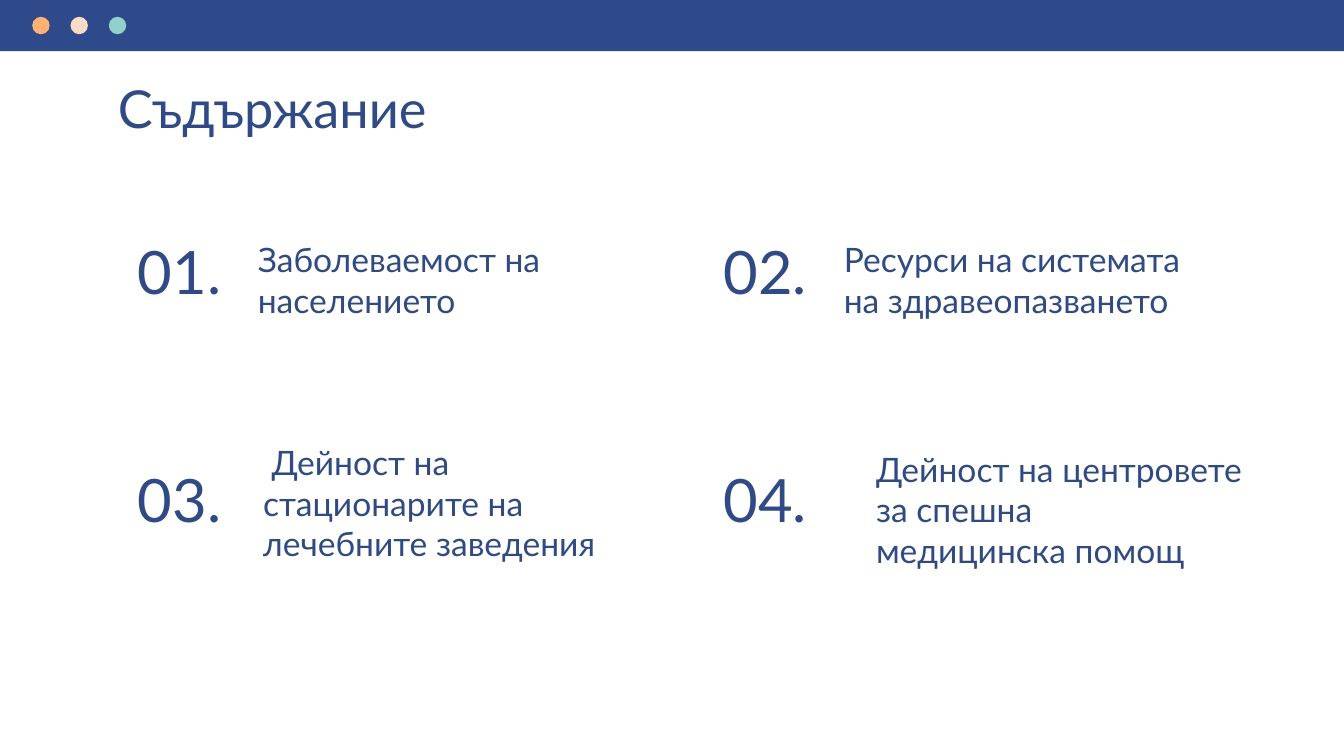
from pptx import Presentation
from pptx.dml.color import RGBColor
from pptx.enum import shapes, text
from pptx.util import Inches, Pt

NAVY = "2F4A8A"
DOT_COLORS = ["FFB172", "F8DBC4", "90D1CB"]
SLIDE_W = 10
SLIDE_H = SLIDE_W * 9 / 16


def rgb(value):
    return RGBColor.from_string(value)


def add_solid(s, kind, x, y, w, h, color):
    sp = s.shapes.add_shape(kind, Inches(x), Inches(y), Inches(w), Inches(h))
    sp.shadow.inherit = False
    sp.fill.solid()
    sp.fill.fore_color.rgb = rgb(color)
    sp.line.fill.background()


def add_text(s, x, y, w, h, lines, size,
             align=text.PP_ALIGN.LEFT, anchor=text.MSO_ANCHOR.TOP):
    tf = s.shapes.add_textbox(Inches(x), Inches(y), Inches(w), Inches(h)).text_frame
    tf.word_wrap = True
    tf.vertical_anchor = anchor
    tf.margin_left = tf.margin_right = Inches(0.1)
    tf.margin_top = tf.margin_bottom = Inches(0.1)
    p = tf.paragraphs[0]
    p.alignment = align
    for i, line in enumerate(lines):
        if i:
            p.add_line_break()
        r = p.add_run()
        r.text = line
        r.font.name = "Lato"
        r.font.size = Pt(size)
        r.font.color.rgb = rgb(NAVY)


def add_window_bar(s, x, y, w, h):
    add_solid(s, shapes.MSO_SHAPE.RECTANGLE, x, y, w, h, NAVY)
    dot, pitch = 0.13, 0.57 / 2
    for i, color in enumerate(DOT_COLORS):
        add_solid(s, shapes.MSO_SHAPE.OVAL, x + 0.24 + i * pitch,
                  y + (h - dot) / 2, dot, dot, color)


def add_entry(s, x, y, number, lines, dx, dy, w, h):
    """Number at (x, y), with its topic offset by (dx, dy)."""
    add_text(s, x + dx, y + dy, w, h, lines, 18)
    add_text(s, x, y, 0.99, 0.64, [f"{number:02d}."], 32,
             text.PP_ALIGN.CENTER, text.MSO_ANCHOR.BOTTOM)


def add_contents(s, x, y):
    col_pitch, row_pitch = 4.36, 1.7
    # Topic lines, then offset from the number and box size
    entries = [
        (["Заболеваемост на населението"], 0.98, -0.06, 2.92, 0.51),
        (["Ресурси на системата на здравеопазването"], 0.98, -0.06, 2.98, 0.8),
        ([" Дейност на стационарите на лечебните заведения"], 1.02, -0.25, 2.83, 1.16),
        (["Дейност на центровете за спешна", "медицинска помощ"], 1.22, -0.2, 2.98, 1.1),
    ]
    for i, entry in enumerate(entries):
        row, col = divmod(i, 2)
        add_entry(s, x + col * col_pitch, y + row * row_pitch, i + 1, *entry)


def main():
    prs = Presentation()
    prs.slide_width, prs.slide_height = Inches(SLIDE_W), Inches(SLIDE_H)
    s = prs.slides.add_slide(prs.slide_layouts[6])

    # Heading
    add_text(s, 0.78, 0.47, 8.44, 0.51, ["Съдържание"], 28)
    # Numbered topics
    add_contents(s, 0.84, 1.74)
    # Top bar with window dots
    add_window_bar(s, 0, 0, SLIDE_W, 0.38)

    prs.save("out.pptx")


if __name__ == "__main__":
    main()
